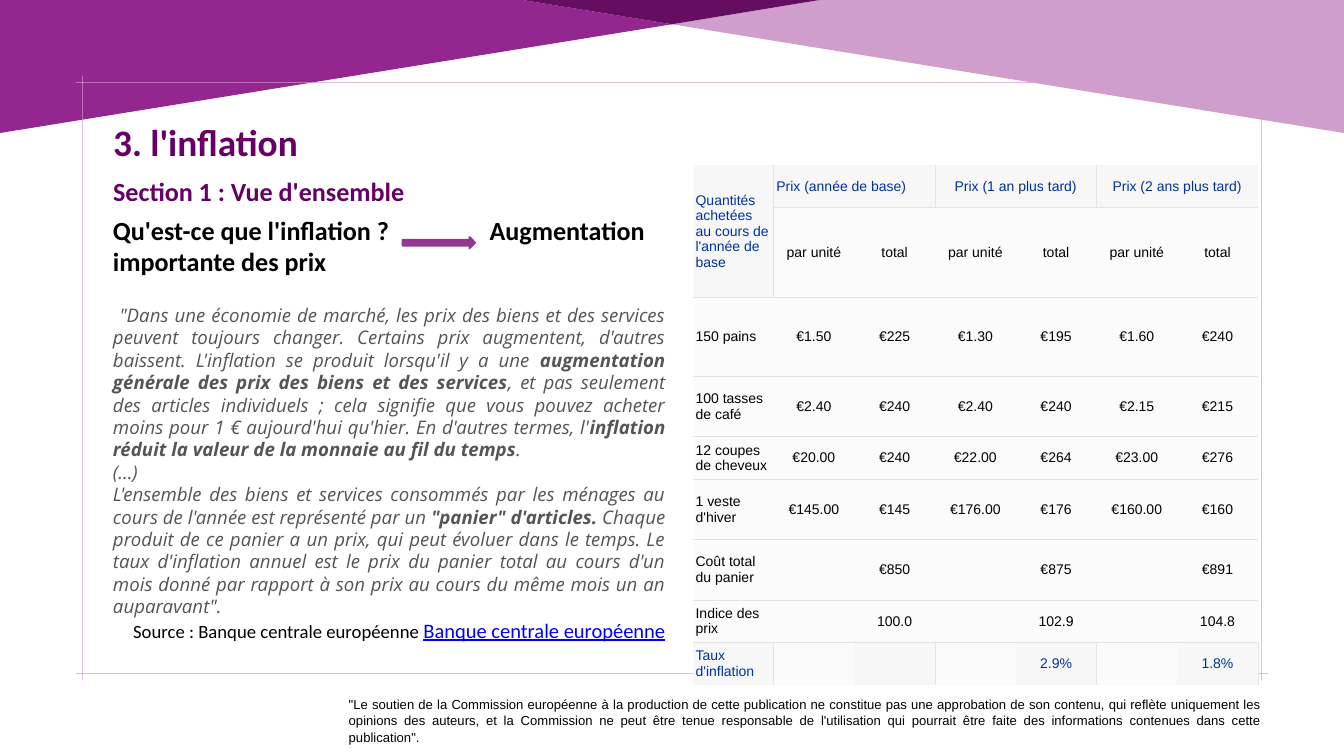
"""Build the slide on inflation with its price table."""
import dataclasses

import lxml.etree
import pptx
import pptx.dml.color
import pptx.enum.shapes
import pptx.enum.text
import pptx.oxml.ns
import pptx.util

Pt = pptx.util.Pt
ALIGN = pptx.enum.text.PP_ALIGN
MIDDLE = pptx.enum.text.MSO_ANCHOR.MIDDLE
qn = pptx.oxml.ns.qn
color_of = pptx.dml.color.RGBColor.from_string


@dataclasses.dataclass(frozen=True)
class Theme:
    purple: str = "93268F"
    pink: str = "CF9ECC"
    plum: str = "640D61"
    heading: str = "660066"
    arrow: str = "94358F"
    black: str = "000000"
    quote: str = "555555"
    link: str = "0000FF"
    label: str = "003299"
    rule: str = "E4E4E4"
    shaded: str = "F7F7F7"
    plain: str = "FBFBFB"
    title_size: int = 40
    subtitle_size: int = 28
    link_size: int = 22
    body_size: int = 20
    table_size: int = 15
    note_size: int = 14


theme = Theme()


def write(para, text, size, color=theme.black, font="Calibri", bold=False,
          italic=False, underline=False, align=ALIGN.LEFT):
    para.alignment = align
    span = para.add_run()
    span.text = text
    span.font.size = Pt(size)
    span.font.name = font
    span.font.bold = bold
    span.font.italic = italic
    span.font.underline = underline
    span.font.color.rgb = color_of(color)


def draw_panel(page, points, color):
    builder = page.shapes.build_freeform(Pt(points[0][0]), Pt(points[0][1]), scale=1.0)
    builder.add_line_segments([(Pt(x), Pt(y)) for x, y in points[1:]])
    panel = builder.convert_to_shape()
    panel.shadow.inherit = False
    panel.fill.solid()
    panel.fill.fore_color.rgb = color_of(color)
    panel.line.fill.background()


deck = pptx.Presentation()
deck.slide_width, deck.slide_height = Pt(1440), Pt(810)
page = deck.slides.add_slide(deck.slide_layouts[5])

draw_panel(page, [(0, 142.5), (0, 0), (560, 0), (720, 26)], theme.purple)

frame_x = dict(zip("abcdef", (81, 87.9, 88.5, 1351.5, 1352.1, 1359)))
frame_y = dict(zip("123456", (81, 87.9, 88.5, 721.5, 722.1, 729)))
frame_corners = ("f2 e2 e1 d1 d2 d3 d4 c4 c3 d3 d2 c2 c1 b1 b2 a2 a3 "
                 "b3 b4 a4 a5 b5 b6 c6 c5 d5 d6 e6 e5 f5 f4 e4 e3 f3")
draw_panel(page, [(frame_x[x], frame_y[y]) for x, y in frame_corners.split()], theme.pink)

draw_panel(page, [(1440, 142.5), (720, 26), (878, 0), (1440, 0)], theme.pink)
draw_panel(page, [(720, 26), (560, 0), (878, 0)], theme.plum)

title = page.shapes.title
title.left, title.top, title.width, title.height = Pt(114), Pt(124), Pt(936), Pt(101.5)
title.text_frame.word_wrap = True
title.text_frame.auto_size = pptx.enum.text.MSO_AUTO_SIZE.NONE
title.text_frame.vertical_anchor = pptx.enum.text.MSO_ANCHOR.TOP
write(title.text_frame.paragraphs[0], "3. l'inflation", theme.title_size,
      color=theme.heading, bold=True)
section = title.text_frame.add_paragraph()
section.space_before = Pt(12)
write(section, "Section 1 : Vue d'ensemble", theme.subtitle_size,
      color=theme.heading, bold=True)

body = page.shapes.add_textbox(Pt(114), Pt(226), Pt(606), Pt(499)).text_frame
body.word_wrap = True
question = body.paragraphs[0]
tabs = lxml.etree.SubElement(question._p.get_or_add_pPr(), qn("a:tabLst"))
lxml.etree.SubElement(tabs, qn("a:tab"), pos=str(Pt(403.5)), algn="l")
write(question, "Qu'est-ce que l'inflation ?\tAugmentation importante des prix",
      theme.subtitle_size, bold=True)

quote = [
    [("\"Dans une économie de marché, les prix des biens et des services peuvent toujours "
      "changer. Certains prix augmentent, d'autres baissent. L'inflation se produit "
      "lorsqu'il y a une ", False),
     ("augmentation générale des prix des biens et des services", True),
     (", et pas seulement des articles individuels ; cela signifie que vous pouvez acheter "
      "moins pour 1 € aujourd'hui qu'hier. En d'autres termes, l'", False),
     ("inflation réduit la valeur de la monnaie au fil du temps", True),
     (".", False)],
    [("(...)", False)],
    [("L'ensemble des biens et services consommés par les ménages au cours de l'année est "
      "représenté par un ", False),
     ("\"panier\" d'articles.", True),
     (" Chaque produit de ce panier a un prix, qui peut évoluer dans le temps. Le taux "
      "d'inflation annuel est le prix du panier total au cours d'un mois donné par rapport "
      "à son prix au cours du même mois un an auparavant\".", False)],
]
for index, passages in enumerate(quote):
    para = body.add_paragraph()
    para.line_spacing = Pt(24)
    if index == 0:
        para.space_before = Pt(28.7)
        para._p.get_or_add_pPr().set("indent", str(Pt(7)))
    for text, bold in passages:
        write(para, text, theme.body_size, color=theme.quote, font="Open Sans",
              bold=bold, italic=True, align=ALIGN.JUSTIFY)
source = body.add_paragraph()
write(source, "Source : Banque centrale européenne ", theme.body_size, align=ALIGN.RIGHT)
write(source, "Banque centrale européenne", theme.link_size, color=theme.link,
      underline=True, align=ALIGN.RIGHT)

rows = [
    ["Quantités achetées au cours de l'année de base", "Prix (année de base)", "",
     "Prix (1 an plus tard)", "", "Prix (2 ans plus tard)", ""],
    [""] + ["par unité", "total"] * 3,
    ["150 pains", "€1.50", "€225", "€1.30", "€195", "€1.60", "€240"],
    ["100 tasses de café", "€2.40", "€240", "€2.40", "€240", "€2.15", "€215"],
    ["12 coupes de cheveux", "€20.00", "€240", "€22.00", "€264", "€23.00", "€276"],
    ["1 veste d'hiver", "€145.00", "€145", "€176.00", "€176", "€160.00", "€160"],
    ["Coût total du panier", "", "€850", "", "€875", "", "€891"],
    ["Indice des prix", "", "100.0", "", "102.9", "", "104.8"],
    ["Taux d'inflation", "", "", "", "2.9%", "", "1.8%"],
]
heights = [45.4, 96.5, 84.2, 64.8, 45.4, 64.8, 64.8, 45.4, 45.4]
column_width = 86.5
last_row, last_column = len(rows) - 1, len(rows[0]) - 1
prices = page.shapes.add_table(len(rows), len(rows[0]), Pt(742.3), Pt(177.1),
                               Pt(column_width * len(rows[0])), Pt(sum(heights))).table
for column in prices.columns:
    column.width = Pt(column_width)
for row, height in zip(prices.rows, heights):
    row.height = Pt(height)
prices.cell(0, 0).merge(prices.cell(1, 0))
for start in (1, 3, 5):
    prices.cell(0, start).merge(prices.cell(0, start + 1))

for r, texts in enumerate(rows):
    edge_row = r in (0, last_row)
    for c, text in enumerate(texts):
        cell = prices.cell(r, c)
        cell.margin_left = cell.margin_right = Pt(3)
        cell.margin_top = cell.margin_bottom = Pt(3)
        cell.vertical_anchor = MIDDLE
        ruled = {
            "a:lnL": edge_row and c % 2 == 1 or (r, c) == (1, 1),
            "a:lnR": edge_row and c % 2 == 0 and (r, c) != (0, last_column) or (r, c) == (1, 0),
            "a:lnT": r > 0 and (r, c) != (1, 0),
            "a:lnB": r < last_row,
        }
        for side, shown in ruled.items():
            border = lxml.etree.SubElement(cell._tc.get_or_add_tcPr(), qn(side), w=str(Pt(0.75)))
            fill = lxml.etree.SubElement(border, qn("a:solidFill" if shown else "a:noFill"))
            if shown:
                lxml.etree.SubElement(fill, qn("a:srgbClr"), val=theme.rule)
        shaded = r == 0 or (r == last_row and c % 2 == 0)
        cell.fill.solid()
        cell.fill.fore_color.rgb = color_of(theme.shaded if shaded else theme.plain)
        if text:
            write(cell.text_frame.paragraphs[0], text, theme.table_size,
                  color=theme.label if edge_row else theme.black, font="Arial",
                  align=ALIGN.LEFT if c == 0 or (r, c) == (0, 1) else ALIGN.CENTER)

arrow = page.shapes.add_shape(pptx.enum.shapes.MSO_SHAPE.RIGHT_ARROW,
                              Pt(431.3), Pt(254), Pt(77.8), Pt(12.2))
arrow.shadow.inherit = False
arrow.fill.solid()
arrow.fill.fore_color.rgb = color_of(theme.arrow)
arrow.line.color.rgb = color_of(theme.arrow)
arrow.line.width = Pt(2)

notice = page.shapes.add_textbox(Pt(365.8), Pt(741), Pt(993), Pt(37.5)).text_frame
notice.word_wrap = True
notice.paragraphs[0].line_spacing = 1.07
notice.paragraphs[0]._p.get_or_add_pPr().set("marL", str(Pt(0.75)))
write(notice.paragraphs[0],
      "\"Le soutien de la Commission européenne à la production de cette publication ne "
      "constitue pas une approbation de son contenu, qui reflète uniquement les opinions des "
      "auteurs, et la Commission ne peut être tenue responsable de l'utilisation qui pourrait "
      "être faite des informations contenues dans cette publication\".",
      theme.note_size, font="Arial", align=ALIGN.JUSTIFY)

deck.save("out.pptx")
